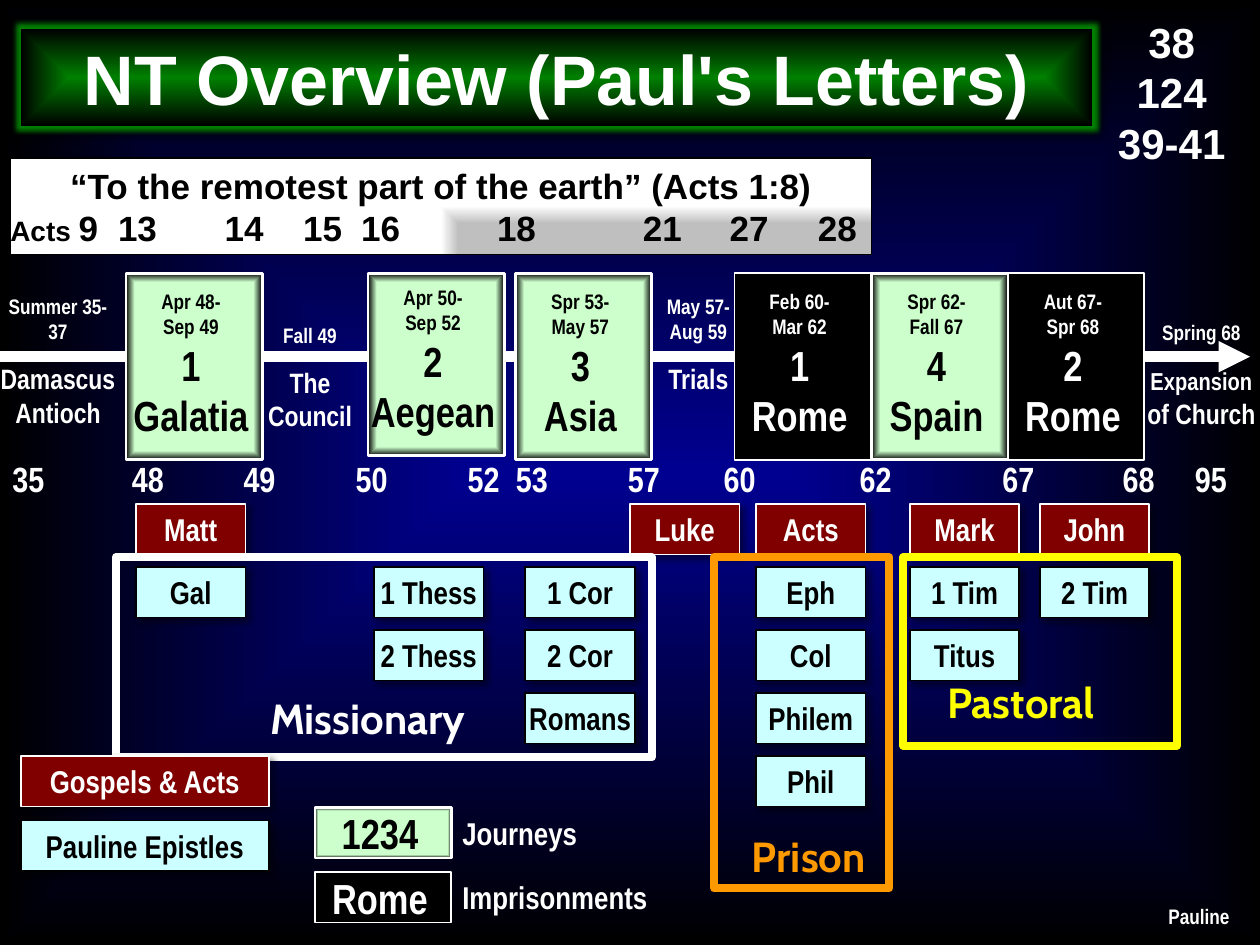
from collections import namedtuple
from copy import deepcopy

from pptx import Presentation
from pptx.dml.color import RGBColor
from pptx.enum.shapes import MSO_CONNECTOR, MSO_SHAPE
from pptx.enum.text import MSO_ANCHOR as Anchor, MSO_AUTO_SIZE, PP_ALIGN as Align
from pptx.oxml import parse_xml
from pptx.oxml.ns import nsdecls, qn
from pptx.util import Cm, Pt

COLORS = {
    "white": "FFFFFF", "black": "000000", "navy": "000090", "green": "008000",
    "mint": "CCFFCC", "grey": "BFBFBF", "ice": "CCFFFF", "maroon": "800000",
    "orange": "FF9900", "yellow": "FFFF00",
}
NARROW = "Arial Narrow"
CENTER_FOCUS = (50, 50, 50, 50)
MINT_STOPS = [(0, "mint"), (87, "mint"), (100, "black")]
INSET = (0.25, 0.13, 0.25, 0.13)
NO_INSET = (0, 0, 0, 0)
CHIP_INSET = (0, 0.13, 0, 0.13)

Box = namedtuple("Box", "left top width height")


def within(box, left, top, width, height):
    return Box(box.left + left, box.top + top, width, height)


def rgb(name):
    return RGBColor.from_string(COLORS[name])


# Formatting helpers
def set_gradient(shape, stops, focus=CENTER_FOCUS, path="shape"):
    shape.fill.gradient()
    properties = shape.element.spPr
    stop_xml = "".join(
        f'<a:gs pos="{position * 1000}"><a:srgbClr val="{COLORS[name]}"/></a:gs>'
        for position, name in stops)
    sides = " ".join(f'{side}="{value * 1000}"' for side, value in zip("ltrb", focus))
    properties.replace(properties.find(qn("a:gradFill")), parse_xml(
        f'<a:gradFill {nsdecls("a")} rotWithShape="1"><a:gsLst>{stop_xml}</a:gsLst>'
        f'<a:path path="{path}"><a:fillToRect {sides}/></a:path></a:gradFill>'))


def add_shadow(shape, alpha, blur, distance):
    effects = shape.element.spPr.find(qn("a:effectLst"))
    effects.append(parse_xml(
        f'<a:outerShdw {nsdecls("a")} blurRad="{Pt(blur)}" dist="{Pt(distance)}" '
        f'dir="2700000" algn="ctr" rotWithShape="0"><a:srgbClr val="{COLORS["black"]}">'
        f'<a:alpha val="{alpha * 1000}"/></a:srgbClr></a:outerShdw>'))


def set_tabs(paragraph, positions):
    tabs = "".join(f'<a:tab pos="{Cm(position)}" algn="l"/>' for position in positions)
    paragraph._p.get_or_add_pPr().append(
        parse_xml(f'<a:tabLst {nsdecls("a")}>{tabs}</a:tabLst>'))


def write_text(shape, lines, color="white", font=NARROW, align=Align.CENTER,
               inset=INSET, anchor=Anchor.TOP, gap=0):
    """Each line is a list of (text, size) runs."""
    frame = shape.text_frame
    frame.word_wrap = True
    frame.auto_size = MSO_AUTO_SIZE.NONE
    frame.vertical_anchor = anchor
    (frame.margin_left, frame.margin_top,
     frame.margin_right, frame.margin_bottom) = map(Cm, inset)
    for index, line in enumerate(lines):
        paragraph = frame.add_paragraph() if index else frame.paragraphs[0]
        paragraph.alignment = align
        paragraph.space_before = Pt(gap if index else 0)
        paragraph.text = line[0][0]
        sizes = [line[0][1]] * len(paragraph.runs)
        for text, size in line[1:]:
            paragraph.add_run().text = text
            sizes.append(size)
        for run, size in zip(paragraph.runs, sizes):
            run.font.name, run.font.size, run.font.bold = font, Pt(size), True
            run.font.color.rgb = rgb(color)
        for line_break in paragraph._p.findall(qn("a:br")):
            line_break.append(deepcopy(paragraph.runs[0]._r.rPr))
    return frame.paragraphs


def add_label(shapes, box, lines, **style):
    return write_text(shapes.add_textbox(*map(Cm, box)), lines, **style)


def add_box(shapes, box, fill=None, line=None, width=1):
    shape = shapes.add_shape(MSO_SHAPE.RECTANGLE, *map(Cm, box))
    shape.shadow.inherit = False
    if fill:
        shape.fill.solid()
        shape.fill.fore_color.rgb = rgb(fill)
    else:
        shape.fill.background()
    if line:
        shape.line.color.rgb = rgb(line)
        shape.line.width = Pt(width)
    else:
        shape.line.fill.background()
    return shape


def add_chip(shapes, box, text, fill):
    ink = "white" if fill == "maroon" else "black"
    chip = add_box(shapes, box, fill, ink)
    add_shadow(chip, 43, 4, 3)
    write_text(chip, [[(text, 18)]], ink, inset=CHIP_INSET)


def add_period(shapes, box, lines, journey, bottom=0):
    period = add_box(shapes, box, "black", "white", 1.5 if journey else 1)
    if journey:
        set_gradient(period, MINT_STOPS)
    write_text(period, lines, "black" if journey else "white",
               inset=(0, 0, 0.13, bottom), anchor=Anchor.BOTTOM)


# Regions of the slide
def add_header(slide, box):
    background = add_box(slide.shapes, box)
    set_gradient(background, [(0, "navy"), (100, "black")])
    title = slide.shapes.title
    title.element.addprevious(background.element)
    title.left, title.top, title.width, title.height = map(
        Cm, within(box, 0.42, 0.58, 21.6, 1.96))
    set_gradient(title, [(0, "green"), (100, "black")])
    title.shadow.inherit = False
    title.element.spPr.find(qn("a:effectLst")).append(parse_xml(
        f'<a:glow {nsdecls("a")} rad="{Pt(5)}"><a:srgbClr val="{COLORS["green"]}"/></a:glow>'))
    add_shadow(title, 75, 5, 1.4)
    write_text(title, [[("NT Overview (Paul's Letters)", 40)]],
               font="Arial", anchor=Anchor.MIDDLE)
    add_label(slide.shapes, within(box, 22.02, 0.2, 3.2, 3.33),
              [[("38\v124\v39-41", 24)]], font="Arial")


def add_acts_band(slide, box):
    band = add_box(slide.shapes, box, "grey", "black")
    set_gradient(band, [(64, "grey"), (100, "white")], (100, 100, 0, 0), "rect")
    chapters = "9\t13\t14\t15\t16\t18\t21\t27\t28"
    heading, row = write_text(
        band, [[("“To the remotest part of the earth” (Acts 1:8)", 20)],
               [("Acts ", 16), (chapters, 20)]],
        "black", "Arial", inset=CHIP_INSET)
    row.alignment = Align.LEFT
    set_tabs(row, [2.17, 4.32, 5.9, 7.07, 9.81, 12.75, 14.5, 16.28])


def add_timeline(slide, box):
    shapes = slide.shapes
    # Arrow through time
    y = Cm(box.top + 1.68)
    arrow = shapes.add_connector(MSO_CONNECTOR.STRAIGHT, Cm(box.left), y,
                                 Cm(box.left + 25.2), y)
    arrow.line.color.rgb = rgb("white")
    arrow.line.width = Pt(6)
    arrow.line._get_or_add_ln().append(
        parse_xml(f'<a:tailEnd {nsdecls("a")} type="triangle"/>'))
    arrow.element.spPr.append(parse_xml(f'<a:effectLst {nsdecls("a")}/>'))
    # Events between the journeys
    for left, top, width, date, event in [
            (-0.2, 0.41, 2.74, "Summer 35-\v37", [("Damascus\vAntioch", 16)]),
            (5.08, 0.99, 2.34, "Fall 49", [("The\vCouncil", 16)]),
            (13.13, 0.41, 1.9, "May 57-\vAug 59", [("Trials", 16)]),
            (23.04, 0.94, 2.36, "Spring 68", [("Expansion", 14), (" of Church", 16)])]:
        add_label(shapes, within(box, left, top, width, 2.24), [[(date, 12)], event],
                  inset=NO_INSET, gap=10)
    # Journeys and imprisonments
    for left, height, date, place, journey in [
            (2.54, 3.76, "Apr 48-\vSep 49", "1\vGalatia", True),
            (7.42, 3.68, "Apr 50-\vSep 52", "2\vAegean", True),
            (10.39, 3.76, "Spr 53-\vMay 57", "3\vAsia", True),
            (14.81, 3.76, "Feb 60-\vMar 62", "1\vRome", False),
            (17.57, 3.76, "Spr 62-\vFall 67", "4\vSpain", True),
            (20.32, 3.76, "Aut 67-\vSpr 68", "2\vRome", False)]:
        add_period(shapes, within(box, left, 0, 2.75, height),
                   [[(date, 12)], [(place, 24)]], journey, bottom=0.4)
    # Years
    years = "35\t48\t49\t50\t52\t53\t57\t60\t62\t67\t68\t95"
    row, = add_label(shapes, within(box, 0, 3.58, box.width, 1.12), [[(years, 20)]],
                     align=Align.LEFT)
    set_tabs(row, [2.41, 4.66, 6.92, 9.18, 10.15, 12.41, 14.34, 17.08, 19.96, 22.38, 23.84])


def add_books(slide, box):
    pitch = 1.27
    for left, history, letters in [
            (2.74, "Matt", ["Gal"]),
            (7.54, None, ["1 Thess", "2 Thess"]),
            (10.59, None, ["1 Cor", "2 Cor", "Romans"]),
            (12.7, "Luke", []),
            (15.24, "Acts", ["Eph", "Col", "Philem", "Phil"]),
            (18.34, "Mark", ["1 Tim", "Titus"]),
            (20.96, "John", ["2 Tim"])]:
        for row, book in enumerate([history, *letters]):
            if book:
                add_chip(slide.shapes, within(box, left, row * pitch, 2.21, 1.02), book,
                         "ice" if row else "maroon")
    # Frames around the groups of letters
    for name, color, left, width, height, label_left, label_top, label_width, align in [
            ("Missionary", "white", 2.34, 10.8, 4.04, 4.24, 3.68, 6.35, Align.CENTER),
            ("Prison", "orange", 14.4, 3.53, 6.68, 14.4, 6.45, 3.81, Align.CENTER),
            ("Pastoral", "yellow", 18.21, 5.51, 3.81, 18.85, 3.35, 4.01, Align.LEFT)]:
        group = slide.shapes.add_group_shape()
        add_box(group.shapes, within(box, left, 1.07, width, height), line=color, width=4.5)
        add_label(group.shapes, within(box, label_left, label_top, label_width, 1.3),
                  [[(name, 24)]], color=color, font="Cabin", align=align)


def add_legend(slide, box):
    pitch = 1.3
    chips = [("Gospels & Acts", "maroon"), ("Pauline Epistles", "ice")]
    periods = [("1234", "Journeys", True), ("Rome", "Imprisonments", False)]
    for row, ((name, fill), (sample, caption, journey)) in enumerate(zip(chips, periods)):
        top = row * pitch
        add_chip(slide.shapes, within(box, 0, top, 5, 1.02), name, fill)
        add_period(slide.shapes, within(box, 5.93, top + 1.04, 2.75, 1.02),
                   [[(sample, 24)]], journey)
        add_label(slide.shapes, within(box, 8.9, top + 1.17, 4.45, 0.76),
                  [[(caption, 18)]], align=Align.LEFT, inset=NO_INSET)
    add_label(slide.shapes, within(box, 17.57, 2.97, 6.8, 0.51), [[("Pauline", 12)]],
              align=Align.RIGHT, inset=NO_INSET)


def main():
    presentation = Presentation()
    presentation.slide_width, presentation.slide_height = Cm(25.4), Cm(19.05)
    slide = presentation.slides.add_slide(presentation.slide_layouts[5])
    add_header(slide, Box(0, 0, 25.4, 19.05))
    add_acts_band(slide, Box(0.21, 3.18, 17.36, 1.95))
    add_timeline(slide, Box(0, 5.51, 25.4, 4.7))
    add_books(slide, Box(0, 10.16, 25.4, 7.75))
    add_legend(slide, Box(0.42, 15.24, 24.4, 3.4))
    presentation.save("out.pptx")


if __name__ == "__main__":
    main()
